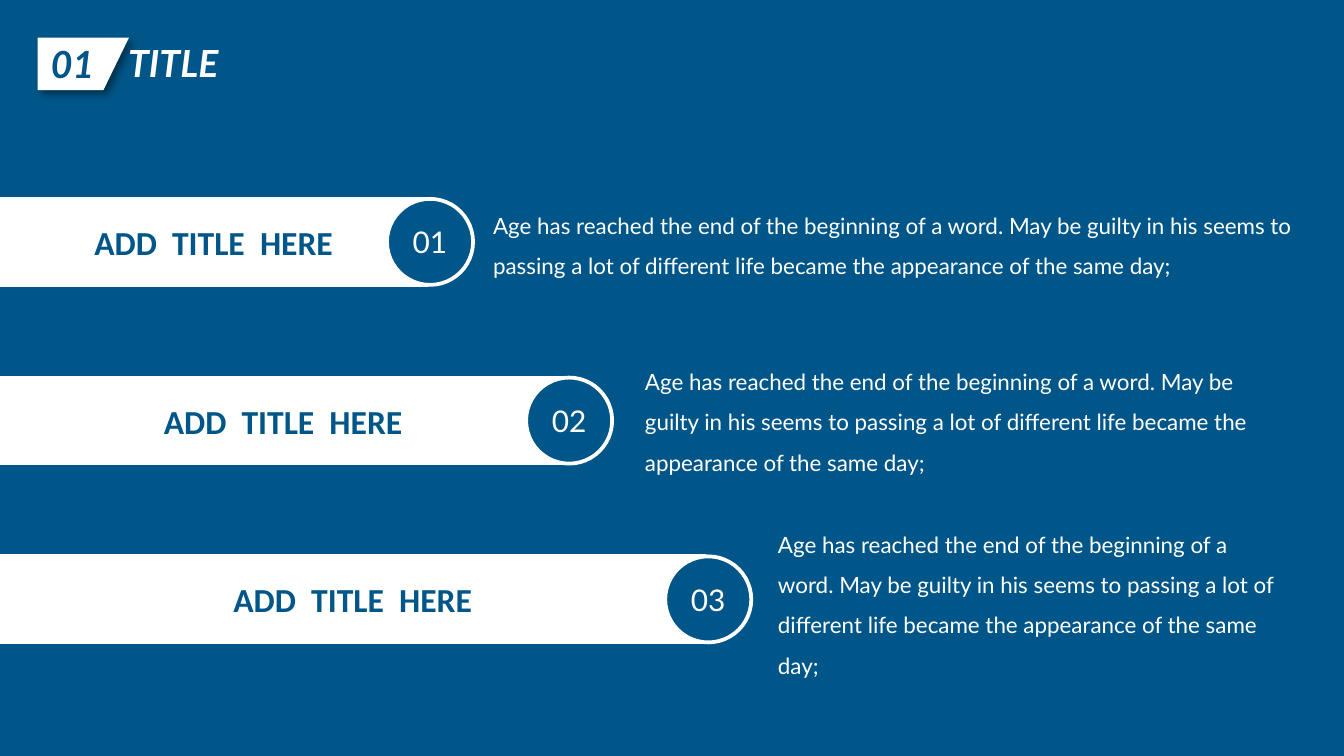
from lxml.etree import SubElement
from pptx import Presentation
from pptx.dml.color import RGBColor as Rgb
from pptx.enum.shapes import MSO_SHAPE as Preset
from pptx.enum.text import MSO_ANCHOR as Anchor, MSO_AUTO_SIZE as Fit, PP_ALIGN as Align
from pptx.oxml.ns import qn
from pptx.util import Inches, Pt

THEME = {
    "blue": Rgb.from_string("005688"),
    "white": Rgb.from_string("FFFFFF"),
    "heading": {"name": "Lato", "size": Pt(20), "bold": True, "italic": True},
    "label": {"name": "Calibri", "size": Pt(18), "bold": True},
    "number": {"name": "Lato", "size": Pt(16)},
    "body": {"name": "Lato", "size": Pt(12)},
    "outline": Pt(2),
}
BLUE, WHITE = THEME["blue"], THEME["white"]

BODY = ("Age has reached the end of the beginning of a word. May be guilty in his "
        "seems to passing a lot of different life became the appearance of the same day;")
# Left, top, width and height of the text beside each bar
BODY_AREAS = [(3.57, 1.43, 6.15, 0.71), (4.7, 2.59, 5.02, 1.01), (5.69, 3.8, 3.94, 1.31)]

FIRST_TOP, ROW_STEP = 1.48, 1.33
BAR_WIDTH, BADGE_LEFT, COLUMN_STEP = 3.18, 2.88, 2.07 / 2
BAR_HEIGHT = 0.64


def write(shape, text, style, color, align=Align.LEFT, anchor=Anchor.MIDDLE, spacing=None):
    frame = shape.text_frame
    frame.word_wrap = style != "number"
    frame.vertical_anchor = anchor
    para = frame.paragraphs[0]
    para.alignment = align
    para.line_spacing = spacing
    span = para.add_run()
    span.text = text
    for name, value in THEME[style].items():
        setattr(span.font, name, value)
    span.font.color.rgb = color


def add_text(shapes, area, text, style, **layout):
    box = shapes.add_textbox(*map(Inches, area))
    write(box, text, style, WHITE, anchor=Anchor.TOP, **layout)
    box.text_frame.auto_size = Fit.SHAPE_TO_FIT_TEXT


deck = Presentation()
deck.slide_width = Inches(10)
deck.slide_height = deck.slide_width * 9 // 16
page = deck.slides.add_slide(deck.slide_layouts[6])
page.background.fill.solid()
page.background.fill.fore_color.rgb = BLUE

# Heading: slanted number tag with a soft shadow, then the title
heading = page.shapes.add_group_shape().shapes
corners = [(Inches(x), Inches(y)) for x, y in
           [(0.28, 0.28), (0.96, 0.28), (0.77, 0.67), (0.28, 0.67)]]
outline = heading.build_freeform(*corners[0])
outline.add_line_segments(corners[1:], close=True)
tag = outline.convert_to_shape()
tag.fill.solid()
tag.fill.fore_color.rgb = WHITE
tag.line.fill.background()
tag.shadow.inherit = False
effects = tag.element.spPr.find(qn("a:effectLst"))
shadow = SubElement(effects, qn("a:outerShdw"), blurRad=str(Pt(4)), dist=str(Pt(3)),
                    dir=str(45 * 60000), algn="tl", rotWithShape="0")
shade = SubElement(shadow, qn("a:srgbClr"), val="000000")
SubElement(shade, qn("a:alpha"), val="40000")
write(tag, "01", "heading", BLUE)
add_text(heading, (0.82, 0.25, 0.94, 0.44), "TITLE", "heading", align=Align.CENTER)

# Three bars, each longer than the one above and closed by a numbered badge
for row in range(len(BODY_AREAS)):
    top = FIRST_TOP + row * ROW_STEP
    shift = row * COLUMN_STEP
    banner = page.shapes.add_group_shape().shapes
    parts = [
        (Preset.RECTANGLE, 0, BAR_WIDTH + shift, WHITE, "ADD  TITLE  HERE", "label", BLUE),
        (Preset.OVAL, BADGE_LEFT + shift, BAR_HEIGHT, BLUE, f"{row + 1:02}", "number", WHITE),
    ]
    for preset, left, width, fill, text, style, ink in parts:
        part = banner.add_shape(preset, *map(Inches, (left, top, width, BAR_HEIGHT)))
        part.shadow.inherit = False
        part.fill.solid()
        part.fill.fore_color.rgb = fill
        part.line.color.rgb = WHITE
        part.line.width = THEME["outline"]
        write(part, text, style, ink, align=Align.CENTER)

for area in BODY_AREAS:
    add_text(page.shapes, area, BODY, "body", spacing=1.5)

deck.save("out.pptx")
